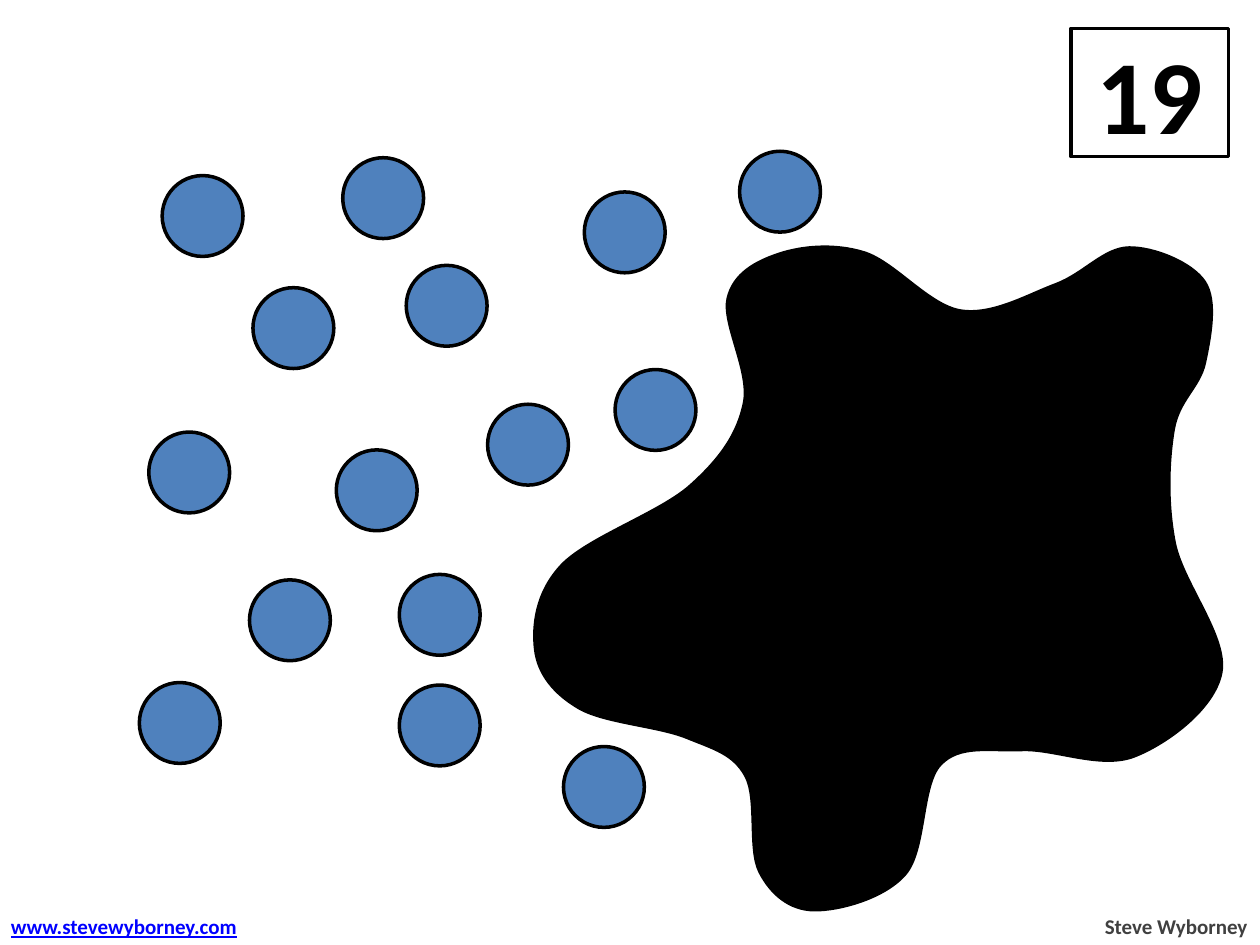
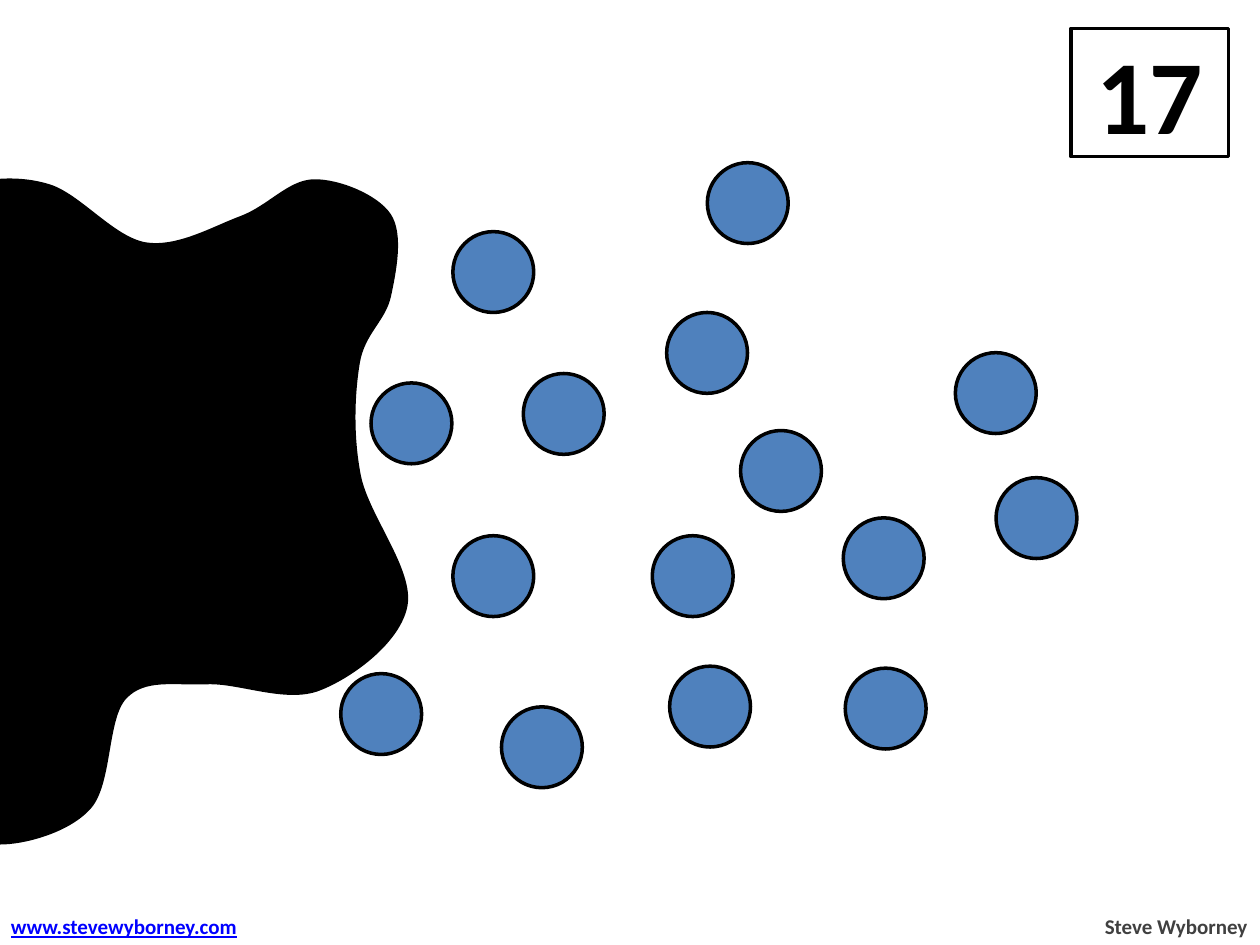
import dataclasses

import lxml.etree
import pptx
import pptx.util
import pptx.dml.color
import pptx.enum.shapes
import pptx.enum.text
import pptx.oxml.ns

Cm = pptx.util.Cm
Pt = pptx.util.Pt
Color = pptx.dml.color.RGBColor.from_string
Align = pptx.enum.text.PP_ALIGN
Anchor = pptx.enum.text.MSO_ANCHOR
qn = pptx.oxml.ns.qn


@dataclasses.dataclass(frozen=True)
class Theme:
    font: str = "Calibri"
    paper: str = "FFFFFF"
    ink: str = "000000"
    dot: str = "4F81BD"
    link: str = "0000FF"
    credit: str = "404040"
    big: int = 60
    small: int = 12
    line: int = 2


THEME = Theme()
WIDTH, HEIGHT = 25.4, 19.05
DOT = 1.63
TITLE = (21.59, 0.57, 3.18, 2.59)
FOOTER = (-0.03, 18.29, 25.43, 0.76)

BLOB = [
    (0.91, 9.27), (0.03, 8.1), (0.56, 6.4), (3.15, 4.8), (4.24, 3.12),
    (3.91, 1.02), (4.93, 0.13), (6.65, 0.1), (8.59, 1.27), (10.52, 0.74),
    (11.99, 0), (13.51, 0.69), (13.51, 2.31), (12.88, 3.66), (12.9, 5.94),
    (13.84, 8.56), (12.09, 10.24), (9.83, 10.11), (8.18, 10.41),
    (7.47, 12.62), (5.64, 13.34), (4.55, 12.57), (4.27, 10.64), (3.07, 9.86),
]

PUZZLES = [
    ("19", (10.77, 5), [
        (3.27, 3.54), (6.91, 3.18), (11.78, 3.87), (14.91, 3.05),
        (5.1, 5.8), (8.19, 5.35), (12.4, 7.45), (9.83, 8.15),
        (3, 8.71), (6.78, 9.07), (5.03, 11.69), (8.05, 11.58),
        (2.81, 13.76), (8.05, 13.81), (11.36, 15.05),
    ]),
    ("17", (-5.66, 3.65), [
        (14.26, 3.28), (9.13, 4.67), (13.44, 6.3), (7.48, 7.72),
        (10.55, 7.53), (14.93, 8.68), (19.26, 7.11), (20.08, 9.63),
        (17, 10.44), (9.13, 10.8), (13.15, 10.8), (6.87, 13.58),
        (10.11, 14.25), (13.5, 13.43), (17.04, 13.47),
    ]),
]


def paint(shape, fill):
    shape.fill.solid()
    shape.fill.fore_color.rgb = Color(fill)
    shape.line.color.rgb = Color(THEME.ink)
    shape.line.width = Pt(THEME.line)


def write(shape, text, size, color, align):
    frame = shape.text_frame
    frame.text = text
    para = frame.paragraphs[0]
    para.alignment = align
    para.font.name = THEME.font
    para.font.size = Pt(size)
    para.font.bold = True
    para.font.color.rgb = Color(color)
    return para


def add_title(slide, box, text):
    title = slide.shapes.title
    title.left, title.top, title.width, title.height = map(Cm, box)
    paint(title, THEME.paper)
    write(title, text, THEME.big, THEME.ink, Align.CENTER)
    title.text_frame.vertical_anchor = Anchor.MIDDLE
    title.text_frame.auto_size = pptx.enum.text.MSO_AUTO_SIZE.NONE


def add_dots(slide, spots):
    for left, top in spots:
        dot = slide.shapes.add_shape(
            pptx.enum.shapes.MSO_SHAPE.OVAL,
            Cm(left), Cm(top), Cm(DOT), Cm(DOT))
        dot.shadow.inherit = False
        paint(dot, THEME.dot)


def lean(knot, back, ahead):
    return [k + (a - b) / 6 for k, b, a in zip(knot, back, ahead)]


def curve(shape):
    lines = list(shape.element.iter(qn("a:lnTo")))
    ends = [(int(line[0].get("x")), int(line[0].get("y"))) for line in lines]
    for i, line in enumerate(lines):
        a, b, c, d = (ends[(i + k) % len(ends)] for k in (-2, -1, 0, 1))
        line.tag = qn("a:cubicBezTo")
        for place, (x, y) in enumerate((lean(b, a, c), lean(c, d, b))):
            point = lxml.etree.Element(
                qn("a:pt"), x=str(round(x)), y=str(round(y)))
            line.insert(place, point)


def add_blob(slide, place):
    start, *rest = [(Cm(x), Cm(y)) for x, y in BLOB]
    pen = slide.shapes.build_freeform(*start)
    pen.add_line_segments([*rest, start], close=True)
    blob = pen.convert_to_shape(*map(Cm, place))
    curve(blob)
    blob.shadow.inherit = False
    paint(blob, THEME.ink)


def add_footer(slide, box):
    left, top, width, height = box
    site, name = 5.21, 3.4
    parts = [
        ("www.stevewyborney.com", left, site, THEME.link, Align.LEFT, True),
        ("Steve Wyborney", left + width - name, name, THEME.credit,
         Align.RIGHT, False),
    ]
    for text, x, wide, color, align, under in parts:
        label = slide.shapes.add_textbox(Cm(x), Cm(top), Cm(wide), Cm(height))
        label.text_frame.word_wrap = False
        para = write(label, text, THEME.small, color, align)
        para.font.underline = under


def add_puzzle(deck, total, place, spots):
    slide = deck.slides.add_slide(deck.slide_layouts[5])
    add_title(slide, TITLE, total)
    add_dots(slide, spots)
    add_blob(slide, place)
    add_footer(slide, FOOTER)


def main():
    deck = pptx.Presentation()
    deck.slide_width, deck.slide_height = Cm(WIDTH), Cm(HEIGHT)
    for puzzle in PUZZLES:
        add_puzzle(deck, *puzzle)
    deck.save("out.pptx")


if __name__ == "__main__":
    main()
